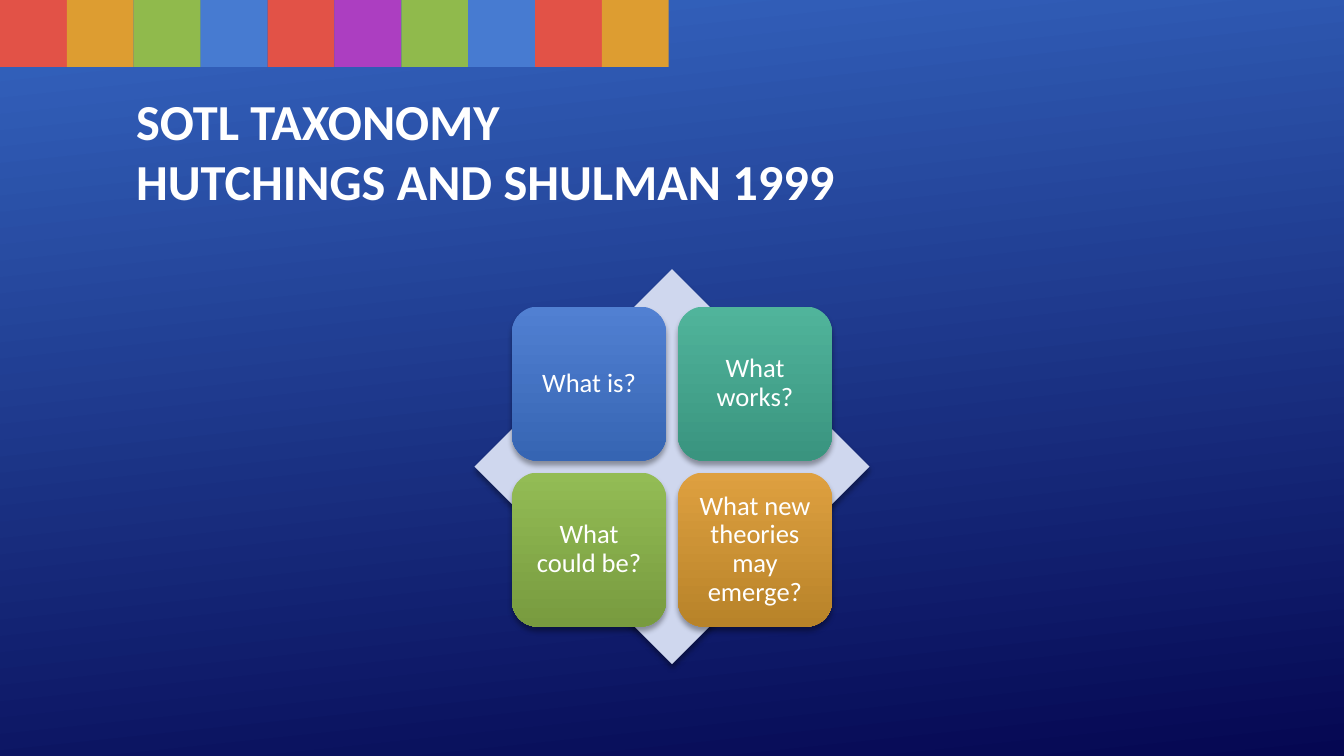
from lxml import etree
from pptx import Presentation
from pptx.dml.color import RGBColor
from pptx.enum import shapes, text
from pptx.oxml import parse_xml
from pptx.oxml.ns import nsdecls
from pptx.util import Pt

COLOURS = {
    "white": "FFFFFF", "red": "E25247", "orange": "DD9D31", "green": "90BA4C",
    "blue": "477BD1", "purple": "AC3EC1", "diamond": "CFD7EE",
    "sky": "3566C1", "night": "050752",
    "blue top": "5180D2", "blue bottom": "3665B3",
    "teal top": "50B49B", "teal bottom": "3A947F",
    "green top": "93BC55", "green bottom": "789B3F",
    "orange top": "DEA040", "orange bottom": "B88329",
}
STRIP = ["red", "orange", "green", "blue", "red",
         "purple", "green", "blue", "red", "orange"]
QUESTIONS = [("What is?", "blue"), ("What works?", "teal"),
             ("What could be?", "green"), ("What new theories may emerge?", "orange")]
FONT = "Calibri"


def rgb(name):
    return RGBColor.from_string(COLOURS[name])


def fill_gradient(fill, start, end, angle):
    """Blend two colours; the angle runs clockwise from left to right."""
    fill.gradient()
    fill.gradient_angle = 360 - angle
    for stop, name, position in zip(fill.gradient_stops, (start, end), (0, 1)):
        stop.color.rgb = rgb(name)
        stop.position = position


def add_plain(slide, kind, left, top, width, height):
    """Add a preset shape with neither outline nor shadow."""
    shape = slide.shapes.add_shape(kind, Pt(left), Pt(top), Pt(width), Pt(height))
    shape.shadow.inherit = False
    shape.line.fill.background()
    return shape


def cast_shadow(shape):
    properties = shape._element.spPr
    effects = properties.find("{*}effectLst")
    effects.append(parse_xml(
        f'<a:outerShdw {nsdecls("a")} blurRad="{Pt(4)}" dist="{Pt(3)}" '
        'dir="5400000" rotWithShape="0"><a:srgbClr val="000000">'
        '<a:alpha val="35000"/></a:srgbClr></a:outerShdw>'))


def add_strip(slide, left, top, side):
    for index, colour in enumerate(STRIP):
        square = add_plain(slide, shapes.MSO_SHAPE.RECTANGLE,
                           left + index * side, top, side, side)
        square.fill.solid()
        square.fill.fore_color.rgb = rgb(colour)


def add_title(slide, left, top, width, height):
    title = slide.shapes.title
    title.left, title.top, title.width, title.height = map(Pt, (left, top, width, height))
    frame = title.text_frame
    frame.text = "SOTL TAXONOMY\vHUTCHINGS AND SHULMAN 1999"
    frame.word_wrap = True
    frame.auto_size = text.MSO_AUTO_SIZE.NONE
    frame.vertical_anchor = text.MSO_ANCHOR.MIDDLE
    heading = frame.paragraphs[0]
    heading.alignment = text.PP_ALIGN.LEFT
    heading.font.name, heading.font.size, heading.font.bold = FONT, Pt(36), True
    heading.font.color.rgb = rgb("white")


def add_question(slide, left, top, side, question, colour):
    tile = add_plain(slide, shapes.MSO_SHAPE.ROUNDED_RECTANGLE, left, top, side, side)
    fill_gradient(tile.fill, f"{colour} top", f"{colour} bottom", 90)
    cast_shadow(tile)
    frame = tile.text_frame
    frame.text = question
    frame.word_wrap = True
    frame.vertical_anchor = text.MSO_ANCHOR.MIDDLE
    frame.margin_left = frame.margin_right = Pt(5.7)
    frame.margin_top = frame.margin_bottom = Pt(5.7)
    label = frame.paragraphs[0]
    label.alignment = text.PP_ALIGN.CENTER
    label.line_spacing = 0.9
    label.font.name, label.font.size = FONT, Pt(19)
    label.font.color.rgb = rgb("white")


def add_matrix(slide, left, top, size):
    """Place the diamond in a square box and the four questions around its centre."""
    diamond = add_plain(slide, shapes.MSO_SHAPE.DIAMOND, left, top, size, size)
    diamond.fill.solid()
    diamond.fill.fore_color.rgb = rgb("diamond")
    cast_shadow(diamond)
    side, gap = size * 0.39, size * 0.03
    margin = (size - 2 * side - gap) / 2
    for index, (question, colour) in enumerate(QUESTIONS):
        row, column = divmod(index, 2)
        add_question(slide, left + margin + column * (side + gap),
                     top + margin + row * (side + gap), side, question, colour)


def main():
    deck = Presentation()
    deck.slide_width, deck.slide_height = Pt(960), Pt(540)
    slide = deck.slides.add_slide(deck.slide_layouts.get_by_name("Title Only"))
    fill_gradient(slide.background.fill, "sky", "night", 84)
    add_strip(slide, 0, 0, 47.77)
    add_title(slide, 90, 49, 780, 117)
    add_matrix(slide, 338.9, 192.2, 282.2)
    deck.save("out.pptx")


if __name__ == "__main__":
    main()
